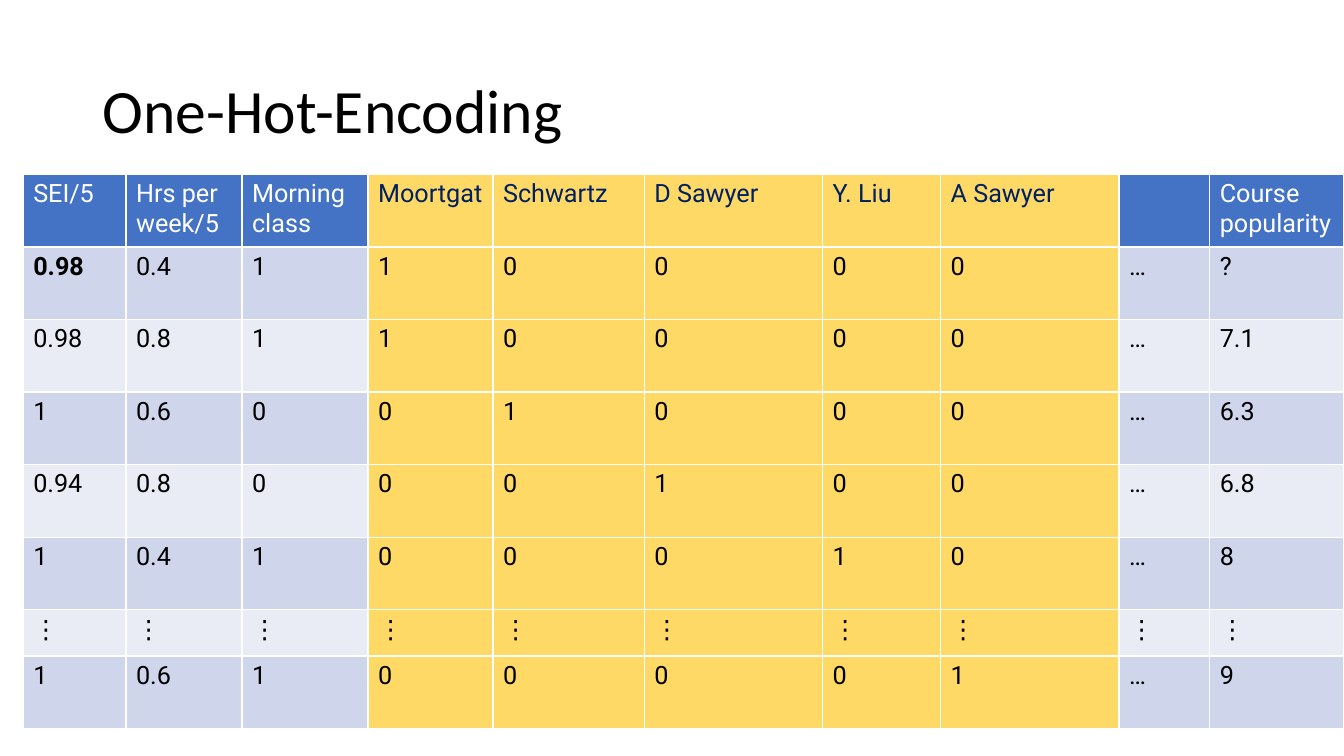
import pptx
import pptx.util
import pptx.dml.color
import pptx.enum.text

Inches = pptx.util.Inches
Pt = pptx.util.Pt
RGBColor = pptx.dml.color.RGBColor

TITLE = "One-Hot-Encoding"
HEADS = ["SEI/5", "Hrs per week/5", "Morning class", "Moortgat", "Schwartz",
         "D Sawyer", "Y. Liu", "A Sawyer", "", "Course popularity"]
DOTS = ["⋮"] * len(HEADS)
ROWS = [
    HEADS,
    ["0.98", "0.4", "1", "1", "0", "0", "0", "0", "…", "?"],
    ["0.98", "0.8", "1", "1", "0", "0", "0", "0", "…", "7.1"],
    ["1", "0.6", "0", "0", "1", "0", "0", "0", "…", "6.3"],
    ["0.94", "0.8", "0", "0", "0", "1", "0", "0", "…", "6.8"],
    ["1", "0.4", "1", "0", "0", "0", "1", "0", "…", "8"],
    DOTS,
    ["1", "0.6", "1", "0", "0", "0", "0", "1", "…", "9"],
]
WIDTHS = [1.02, 1.15, 1.25, 1.24, 1.5, 1.77, 1.17, 1.77, 0.9, 1.33]
TALL, SHORT = 0.72, 0.46
HOT = range(3, 8)

BLACK = RGBColor(0, 0, 0)
WHITE = RGBColor(255, 255, 255)
NAVY = RGBColor(0x00, 0x20, 0x60)
BLUE = RGBColor(0x44, 0x72, 0xC4)
GOLD = RGBColor(0xFF, 0xD9, 0x66)
BANDS = [RGBColor(0xE9, 0xEB, 0xF5), RGBColor(0xCF, 0xD5, 0xEA)]


def style(para, face, size, color, bold=False):
    font = para.font
    font.name, font.size, font.bold = face, Pt(size), bold
    font.color.rgb = color


def add_title(slide):
    title = slide.shapes.title
    title.left, title.top = Inches(0.92), Inches(0.4)
    title.width, title.height = Inches(11.5), Inches(1.45)
    title.text_frame.text = TITLE
    title.text_frame.vertical_anchor = pptx.enum.text.MSO_ANCHOR.MIDDLE
    para = title.text_frame.paragraphs[0]
    para.alignment = pptx.enum.text.PP_ALIGN.LEFT
    para.line_spacing = 0.9
    style(para, "Calibri", 44, BLACK)


def add_grid(slide):
    highs = [SHORT if row is DOTS else TALL for row in ROWS]
    table = slide.shapes.add_table(
        len(ROWS), len(HEADS), Inches(0.23), Inches(1.73),
        Inches(sum(WIDTHS)), Inches(sum(highs))).table
    for col, width in zip(table.columns, WIDTHS):
        col.width = Inches(width)
    for r, row in enumerate(ROWS):
        table.rows[r].height = Inches(highs[r])
        face = "Calibri" if row is DOTS else "Roboto"
        for c, text in enumerate(row):
            cell = table.cell(r, c)
            cell.text = text
            base = BANDS[r % 2] if r else BLUE
            cell.fill.solid()
            cell.fill.fore_color.rgb = GOLD if c in HOT else base
            head = NAVY if c in HOT else WHITE
            style(cell.text_frame.paragraphs[0], face, 18,
                  BLACK if r else head, (r, c) == (1, 0))


def main():
    """Build the one-hot encoding slide."""
    deck = pptx.Presentation()
    deck.slide_width, deck.slide_height = Inches(13.33), Inches(7.5)
    slide = deck.slides.add_slide(deck.slide_layouts[5])
    add_title(slide)
    add_grid(slide)
    deck.save("out.pptx")


if __name__ == "__main__":
    main()
